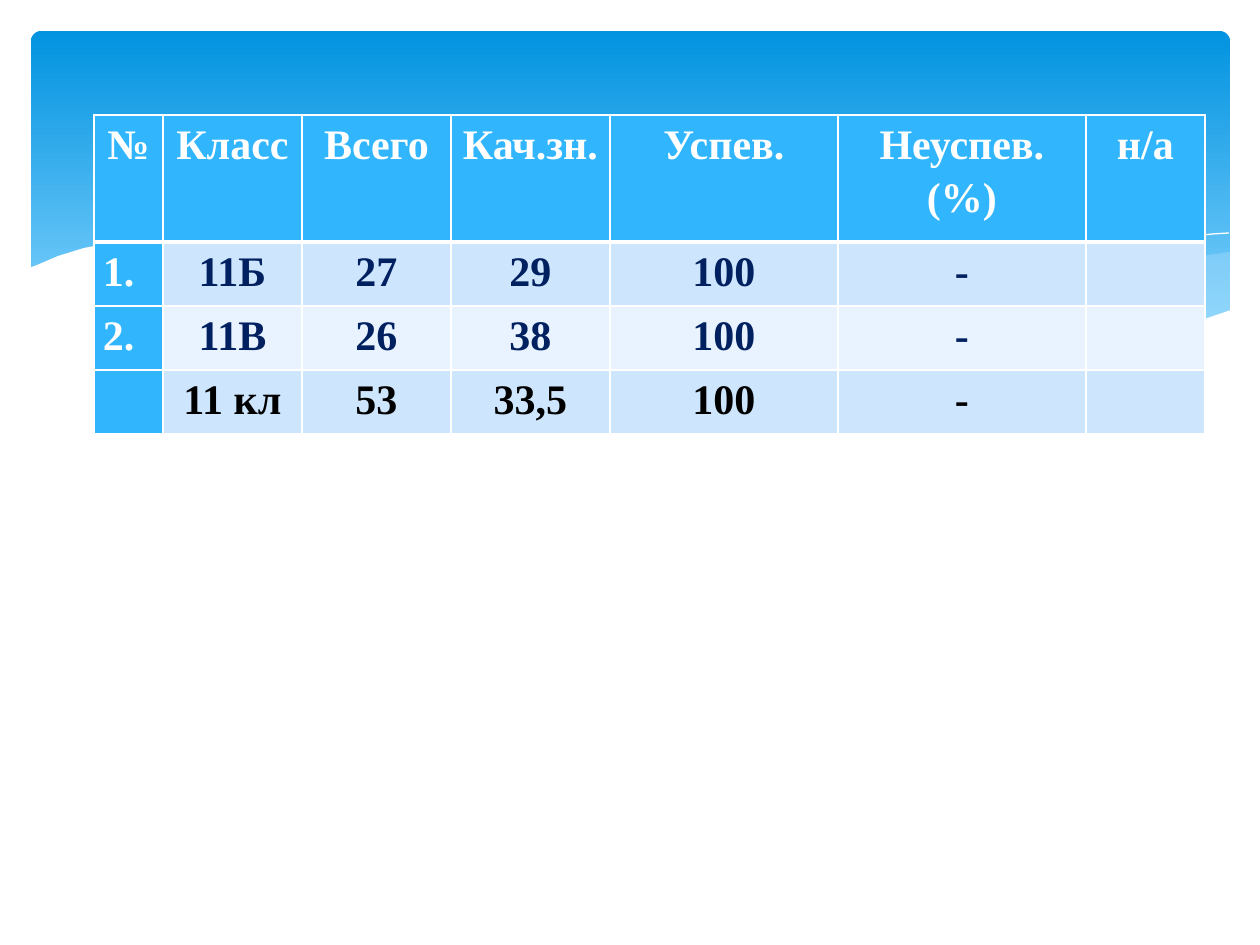
from dataclasses import dataclass
from typing import Optional

from lxml.etree import SubElement
from pptx import Presentation
from pptx.dml.color import RGBColor
from pptx.enum.shapes import MSO_SHAPE
from pptx.enum.text import PP_ALIGN
from pptx.oxml.ns import qn
from pptx.util import Emu, Pt

EMU_PER_PX = 914400 // 126
WHITE, PALE, ACCENT = "FFFFFF", "C6E7FC", "31B6FD"
NAVY, BLACK = "002060", "000000"
BAND_DARK, BAND_LIGHT = "CEE5FE", "E8F3FF"


@dataclass
class Wave:
    points: list[tuple[int, int]]
    fill: Optional[str] = None
    opacity: int = 100


@dataclass
class Row:
    texts: list[str]
    height: int
    fill: str
    color: str


WAVES = [
    Wave([(1229, 252), (1194, 257), (1142, 268), (1085, 281), (1014, 299), (949, 312),
          (890, 324), (833, 334), (888, 341), (939, 347), (998, 349), (1052, 349),
          (1110, 344), (1160, 334), (1196, 324), (1230, 311), (1230, 252)], PALE, 29),
    Wave([(1125, 344), (1055, 334), (977, 320), (890, 302), (793, 280), (736, 266),
          (682, 256), (633, 247), (557, 238), (503, 234), (455, 233), (413, 236),
          (360, 241), (431, 251), (509, 266), (566, 280), (668, 302), (757, 321),
          (838, 335), (910, 345), (974, 349), (1031, 350), (1080, 349)], PALE, 40),
    Wave([(389, 246), (413, 242), (445, 238), (487, 236), (545, 236), (616, 239),
          (701, 248), (801, 262), (916, 285), (1047, 316), (1143, 343)]),
    Wave([(772, 324), (823, 310), (907, 289), (1016, 265), (1091, 251), (1164, 239),
          (1213, 234), (1229, 233)]),
    Wave([(1231, 310), (1184, 326), (1133, 339), (1071, 347), (1019, 349), (959, 347),
          (892, 340), (816, 330), (730, 315), (634, 294), (563, 277), (493, 261),
          (428, 248), (368, 239), (315, 234), (266, 232), (223, 232), (184, 233),
          (150, 236), (120, 241), (84, 248), (58, 256), (37, 265), (29, 268),
          (29, 415), (1231, 415)], WHITE),
]

COLUMN_WIDTHS = [69, 139, 149, 159, 228, 248, 119]
ROWS = [
    Row(["№", "Класс", "Всего", "Кач.зн.", "Успев.", "Неуспев.\n(%)", "н/а"],
        127, ACCENT, WHITE),
    Row(["1.", "11Б", "27", "29", "100", "-", ""], 64, BAND_DARK, NAVY),
    Row(["2.", "11В", "26", "38", "100", "-", ""], 64, BAND_LIGHT, NAVY),
    Row(["", "11 кл", "53", "33,5", "100", "-", ""], 64, BAND_DARK, BLACK),
]


def px(length: int) -> Emu:
    return Emu(length * EMU_PER_PX)


def color(value: str) -> RGBColor:
    return RGBColor.from_string(value)


def draw_banner(page) -> None:
    banner = page.shapes.add_shape(
        MSO_SHAPE.ROUNDED_RECTANGLE, px(31), px(31), px(1199), px(340))
    banner.shadow.inherit = False
    banner.adjustments[0] = 0.03
    banner.line.fill.background()
    banner.fill.gradient()
    banner.fill.gradient_angle = 270
    stops = banner.fill.gradient_stops
    for stop, position, value in zip(stops, (0, 0.9), ("0293E0", "83D3FE")):
        stop.position = position
        stop.color.rgb = color(value)


def draw_wave(page, wave: Wave) -> None:
    builder = page.shapes.build_freeform(*wave.points[0], scale=EMU_PER_PX)
    builder.add_line_segments(wave.points[1:], close=wave.fill is not None)
    shape = builder.convert_to_shape()
    shape.shadow.inherit = False
    if wave.fill is None:
        shape.fill.background()
        shape.line.color.rgb = color(WHITE)
        shape.line.width = Pt(0)
        return
    shape.line.fill.background()
    shape.fill.solid()
    shape.fill.fore_color.rgb = color(wave.fill)
    if wave.opacity < 100:
        fill_color = shape.fill._xPr.find(qn("a:solidFill"))[0]
        SubElement(fill_color, qn("a:alpha"), val=str(wave.opacity * 1000))


def set_border(cell, side: str, points: int) -> None:
    properties = cell._tc.get_or_add_tcPr()
    line = SubElement(properties, qn(f"a:ln{side}"), w=str(Pt(points)))
    fill = SubElement(line, qn("a:solidFill"))
    SubElement(fill, qn("a:srgbClr"), val=WHITE)


def fill_cell(cell, text: str, fill: str, font_color: str, align, top: int, bottom: int) -> None:
    for side, points in zip("LRTB", (1, 1, top, bottom)):
        set_border(cell, side, points)
    cell.fill.solid()
    cell.fill.fore_color.rgb = color(fill)
    cell.margin_left = cell.margin_right = px(9)
    cell.margin_top = cell.margin_bottom = 0
    cell.text = text
    for para in cell.text_frame.paragraphs:
        para.alignment = align
        para.line_spacing = 1.15
        para.font.name = "Times New Roman"
        para.font.size = Pt(24)
        para.font.bold = True
        para.font.color.rgb = color(font_color)


def draw_table(page) -> None:
    frame = page.shapes.add_table(
        len(ROWS), len(COLUMN_WIDTHS), px(94), px(115),
        px(sum(COLUMN_WIDTHS)), px(sum(row.height for row in ROWS)))
    table = frame.table
    table.horz_banding = False
    for column, width in zip(table.columns, COLUMN_WIDTHS):
        column.width = px(width)
    for row_index, row in enumerate(ROWS):
        table.rows[row_index].height = px(row.height)
        top = 3 if row_index == 1 else 1
        bottom = 3 if row_index == 0 else 1
        for column_index, text in enumerate(row.texts):
            numbering = column_index == 0
            fill_cell(
                table.cell(row_index, column_index), text,
                ACCENT if numbering else row.fill,
                WHITE if numbering else row.color,
                PP_ALIGN.LEFT if numbering and row_index else PP_ALIGN.CENTER,
                top, bottom)


def main() -> None:
    deck = Presentation()
    deck.slide_width, deck.slide_height = px(1260), px(945)
    page = deck.slides.add_slide(deck.slide_layouts[6])
    draw_banner(page)
    for wave in WAVES:
        draw_wave(page, wave)
    draw_table(page)
    deck.save("out.pptx")


if __name__ == "__main__":
    main()
